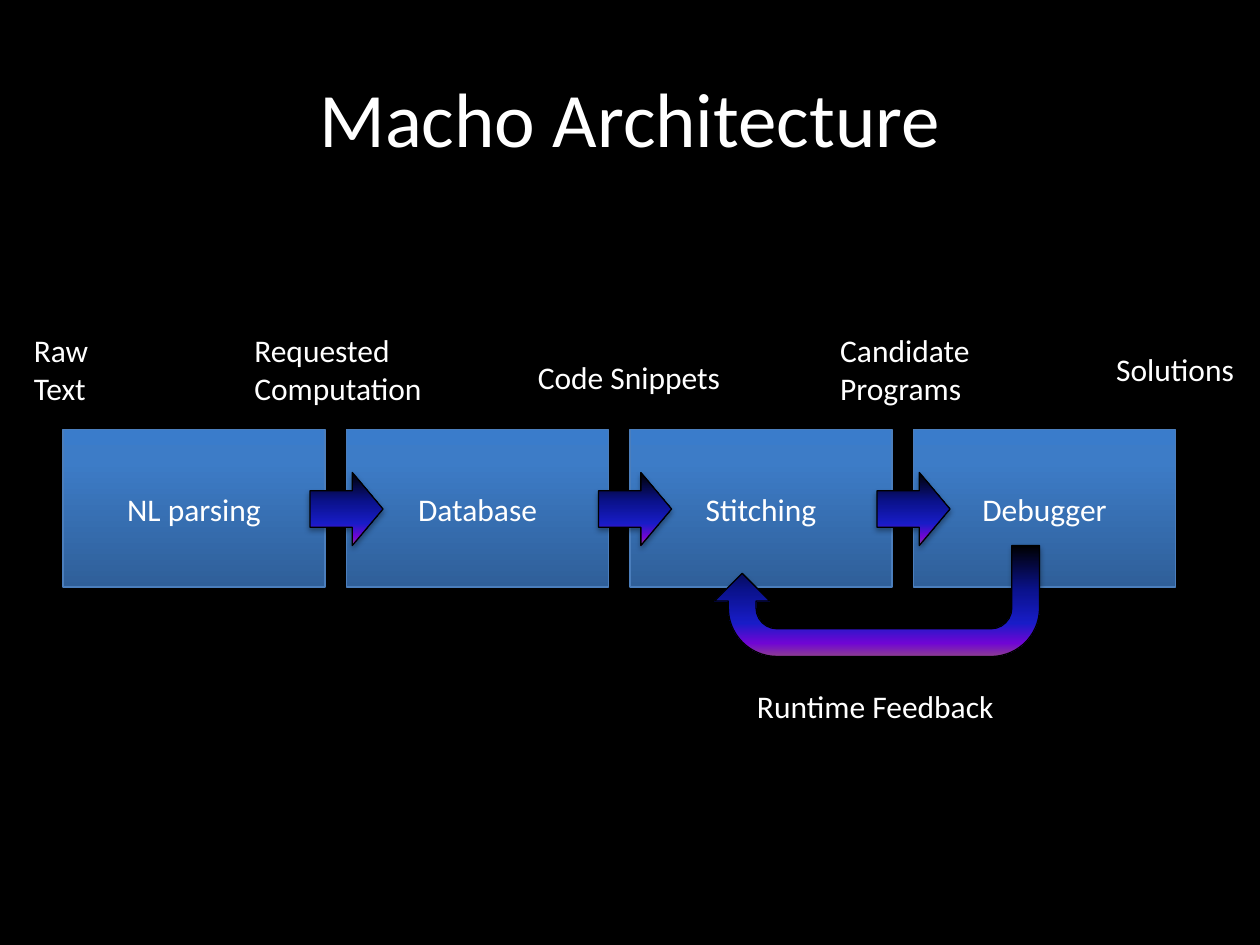
from pptx import Presentation
from pptx.dml.color import RGBColor
from pptx.enum import shapes, text
from pptx.oxml import parse_xml
from pptx.oxml.ns import nsdecls
from pptx.util import Inches, Pt

WHITE, BLACK = "FFFFFF", "000000"
STAGE_LINE = "4B7EBC"
STAGE_STOPS = [(0, "2F5F99"), (80, "3D7CC7"), (100, "3A7CCB")]
ARROW_STOPS = [(0, BLACK), (40, "0A128C"), (70, "181CC7"),
               (88, "7005D4"), (100, "8C3D91")]


def color(hex_value):
    return RGBColor.from_string(hex_value)


def write(frame, lines, size=18, align=text.PP_ALIGN.LEFT):
    for i, line in enumerate(lines):
        paragraph = frame.paragraphs[0] if i == 0 else frame.add_paragraph()
        paragraph.text = line
        paragraph.alignment = align
        paragraph.font.size = Pt(size)
        paragraph.font.name = "Calibri"
        paragraph.font.color.rgb = color(WHITE)


def add_block(slide, kind, box, stops, line):
    """Add a preset shape with an upward gradient and a soft shadow."""
    block = slide.shapes.add_shape(kind, *map(Inches, box))
    block.line.color.rgb = color(line)
    block.line.width = Pt(0.75)
    block.shadow.inherit = False
    properties = block._element.spPr
    stop_xml = "".join(
        f'<a:gs pos="{pos * 1000}"><a:srgbClr val="{value}"/></a:gs>'
        for pos, value in stops)
    properties.prstGeom.addnext(parse_xml(
        f'<a:gradFill {nsdecls("a")} rotWithShape="1"><a:gsLst>{stop_xml}'
        '</a:gsLst><a:lin ang="16200000" scaled="0"/></a:gradFill>'))
    properties.find("{*}effectLst").append(parse_xml(
        f'<a:outerShdw {nsdecls("a")} blurRad="{Pt(3.1)}" dist="{Pt(1.8)}" '
        f'dir="5400000" rotWithShape="0"><a:srgbClr val="{BLACK}">'
        '<a:alpha val="35000"/></a:srgbClr></a:outerShdw>'))
    return block


def add_title(slide, box, title):
    frame = slide.shapes.add_textbox(*map(Inches, box)).text_frame
    frame.word_wrap = True
    frame.vertical_anchor = text.MSO_ANCHOR.MIDDLE
    write(frame, [title], 44, text.PP_ALIGN.CENTER)


def add_stages(slide, box, names, gap=0.17):
    left, top, width, height = box
    stage_width = (width - gap * (len(names) - 1)) / len(names)
    for i, name in enumerate(names):
        stage = add_block(
            slide, shapes.MSO_SHAPE.RECTANGLE,
            (left + i * (stage_width + gap), top, stage_width, height),
            STAGE_STOPS, STAGE_LINE)
        stage.text_frame.vertical_anchor = text.MSO_ANCHOR.MIDDLE
        write(stage.text_frame, [name], align=text.PP_ALIGN.CENTER)


def add_flow_arrow(slide, box):
    arrow = add_block(slide, shapes.MSO_SHAPE.RIGHT_ARROW, box,
                      ARROW_STOPS, BLACK)
    arrow.adjustments[0] = 0.5
    arrow.adjustments[1] = 0.42
    arrow._element.spPr.xfrm.set("flipV", "1")


def add_feedback_arrow(slide, box):
    arrow = add_block(slide, shapes.MSO_SHAPE.U_TURN_ARROW, box,
                      ARROW_STOPS, BLACK)
    arrow.rotation = 180


def add_label(slide, box, lines):
    frame = slide.shapes.add_textbox(*map(Inches, box)).text_frame
    frame.word_wrap = False
    frame.auto_size = text.MSO_AUTO_SIZE.SHAPE_TO_FIT_TEXT
    write(frame, lines)


def build_slide(prs):
    slide = prs.slides.add_slide(prs.slide_layouts[6])
    slide.background.fill.solid()
    slide.background.fill.fore_color.rgb = color(BLACK)

    add_title(slide, (0.5, 0.3, 9, 1.25), "Macho Architecture")

    # Pipeline stages and the arrows between them
    add_stages(slide, (0.5, 3.41, 8.83, 1.25),
               ["NL parsing", "Database", "Stitching", "Debugger"])
    for left in (2.46, 4.75, 6.96):
        add_flow_arrow(slide, (left, 3.75, 0.58, 0.58))
    add_feedback_arrow(slide, (5.67, 4.33, 2.58, 0.88))

    # Data passed between stages
    labels = [
        ((0.17, 2.58, 0.64, 0.71), ["Raw", "Text"]),
        ((1.92, 2.58, 1.55, 0.71), ["Requested", "Computation"]),
        ((4.17, 2.79, 1.67, 0.4), ["Code Snippets"]),
        ((6.57, 2.58, 1.24, 0.71), ["Candidate", "Programs"]),
        ((5.91, 5.4, 2.1, 0.4), ["Runtime Feedback"]),
        ((8.76, 2.73, 1.15, 0.4), ["Solutions"]),
    ]
    for box, lines in labels:
        add_label(slide, box, lines)


def main():
    prs = Presentation()
    prs.slide_width, prs.slide_height = Inches(10), Inches(7.5)
    build_slide(prs)
    prs.save("out.pptx")


if __name__ == "__main__":
    main()
